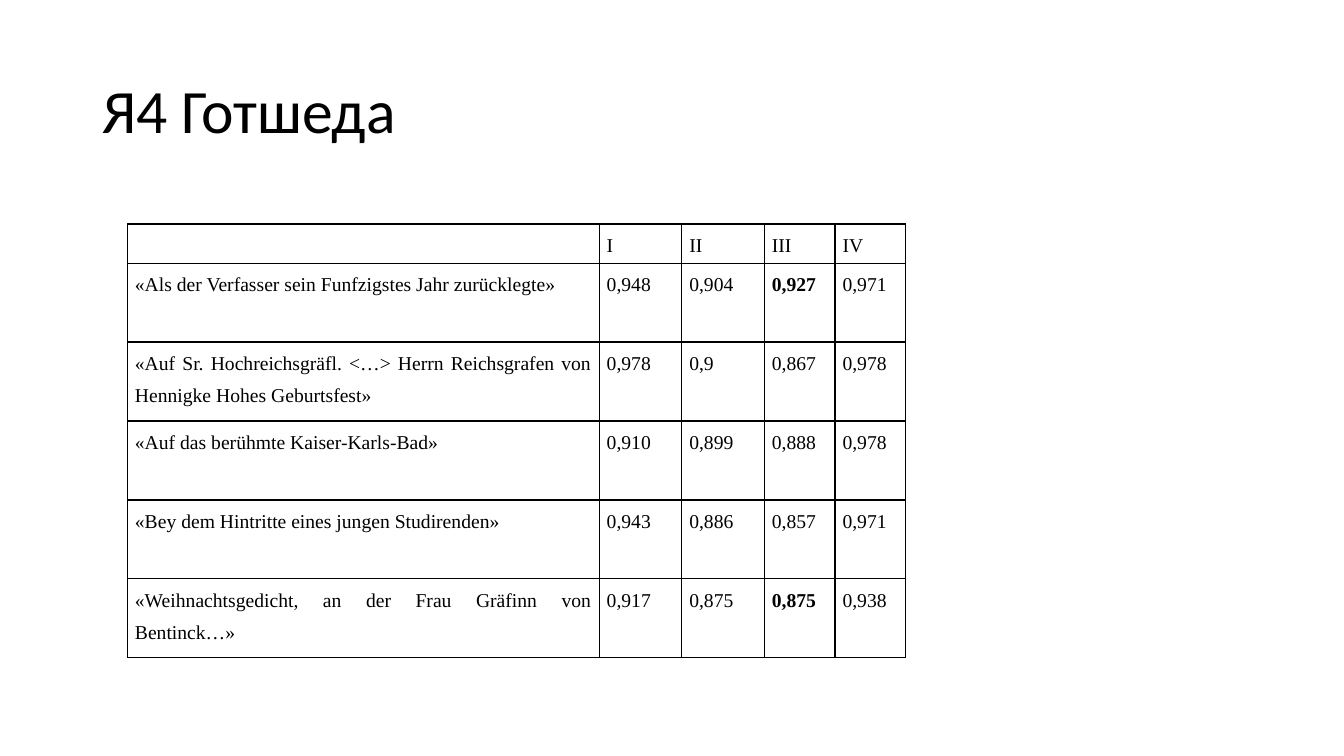
from dataclasses import dataclass

from lxml.etree import SubElement
from pptx import Presentation
from pptx.dml.color import RGBColor as RGB
from pptx.enum.text import MSO_ANCHOR as Anchor, PP_ALIGN as Align
from pptx.oxml.ns import qn
from pptx.slide import Slide
from pptx.table import _Cell as Cell
from pptx.text.text import _Paragraph as Para
from pptx.util import Pt


@dataclass(frozen=True)
class Theme:
    ink: RGB = RGB(0, 0, 0)
    paper: RGB = RGB(255, 255, 255)
    head_font: str = "Calibri"
    body_font: str = "Times New Roman"
    head_size: float = 44
    body_size: float = 14
    rule: float = 1


@dataclass(frozen=True)
class Poem:
    title: str
    rates: tuple[str, ...]
    bold: int | None = None  # index of the rate in bold


THEME = Theme()
WIDTHS = (337, 59, 59, 50.5, 50.5)
HEAD_H, ROW_H = 28, 56.4
POEMS = (
    Poem("", ("I", "II", "III", "IV")),
    Poem("«Als der Verfasser sein Funfzigstes Jahr zurücklegte»",
         ("0,948", "0,904", "0,927", "0,971"), bold=2),
    Poem("«Auf Sr. Hochreichsgräfl. <…> Herrn Reichsgrafen von Hennigke Hohes Geburtsfest»",
         ("0,978", "0,9", "0,867", "0,978")),
    Poem("«Auf das berühmte Kaiser-Karls-Bad»",
         ("0,910", "0,899", "0,888", "0,978")),
    Poem("«Bey dem Hintritte eines jungen Studirenden»",
         ("0,943", "0,886", "0,857", "0,971")),
    Poem("«Weihnachtsgedicht, an der Frau Gräfinn von Bentinck…»",
         ("0,917", "0,875", "0,875", "0,938"), bold=2),
)


def style(para: Para, font: str, size: float, bold: bool = False) -> None:
    for run in para.runs:
        run.font.name = font
        run.font.size = Pt(size)
        run.font.bold = bold
        run.font.color.rgb = THEME.ink


def frame(cell: Cell) -> None:
    """Rule all four sides of a cell."""
    props = cell._tc.get_or_add_tcPr()
    for side in ("lnL", "lnR", "lnT", "lnB"):
        line = SubElement(props, qn(f"a:{side}"), w=str(Pt(THEME.rule)))
        fill = SubElement(line, qn("a:solidFill"))
        SubElement(fill, qn("a:srgbClr"), val=str(THEME.ink))


def write(cell: Cell, text: str, bold: bool) -> None:
    frame(cell)
    cell.fill.solid()
    cell.fill.fore_color.rgb = THEME.paper
    cell.margin_left = cell.margin_right = Pt(5.4)
    cell.margin_top = cell.margin_bottom = Pt(0)
    cell.text_frame.text = text
    para = cell.text_frame.paragraphs[0]
    para.alignment = Align.JUSTIFY
    para.line_spacing = 1.5
    style(para, THEME.body_font, THEME.body_size, bold)


def add_title(slide: Slide, text: str) -> None:
    box = slide.shapes.add_textbox(Pt(66), Pt(28.75), Pt(828), Pt(104.4))
    body = box.text_frame
    body.word_wrap = True
    body.vertical_anchor = Anchor.MIDDLE
    body.text = text
    body.paragraphs[0].line_spacing = 0.9
    style(body.paragraphs[0], THEME.head_font, THEME.head_size)


def add_grid(slide: Slide, poems: tuple[Poem, ...]) -> None:
    high = HEAD_H + ROW_H * (len(poems) - 1)
    grid = slide.shapes.add_table(len(poems), len(WIDTHS), Pt(91), Pt(160),
                                  Pt(sum(WIDTHS)), Pt(high)).table
    for col, width in zip(grid.columns, WIDTHS):
        col.width = Pt(width)
    for i, (row, poem) in enumerate(zip(grid.rows, poems)):
        row.height = Pt(ROW_H if i else HEAD_H)
        for j, text in enumerate((poem.title, *poem.rates)):
            write(grid.cell(i, j), text, bold=j - 1 == poem.bold)


def main() -> None:
    deck = Presentation()
    deck.slide_width, deck.slide_height = Pt(960), Pt(540)
    slide = deck.slides.add_slide(deck.slide_layouts[6])
    # Heading
    add_title(slide, "Я4 Готшеда")
    # Rates by poem and foot
    add_grid(slide, POEMS)
    deck.save("out.pptx")


if __name__ == "__main__":
    main()
